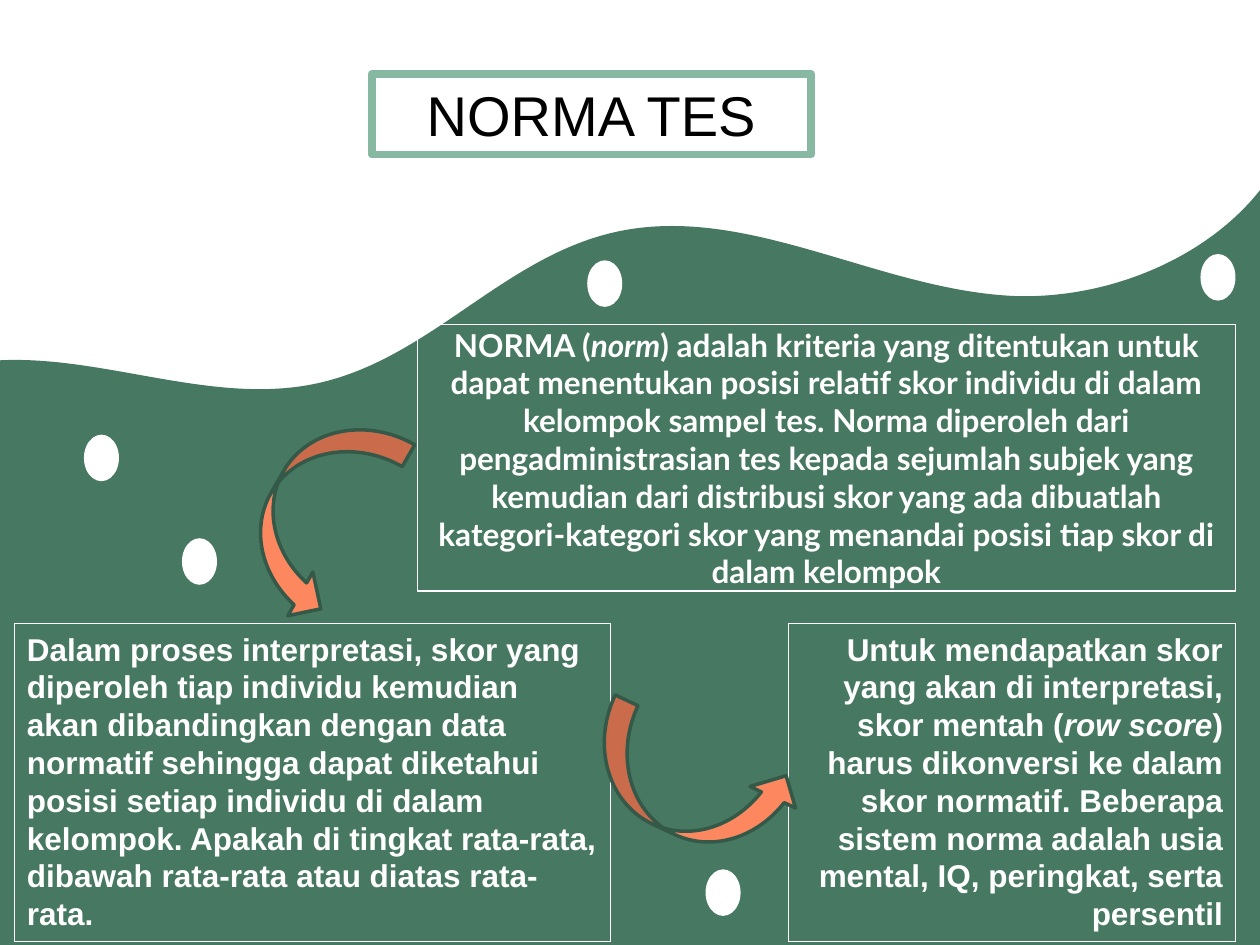
from lxml.etree import SubElement
from pptx import Presentation
from pptx.dml.color import RGBColor
from pptx.enum.shapes import MSO_SHAPE
from pptx.enum.text import MSO_ANCHOR, MSO_AUTO_SIZE, PP_ALIGN
from pptx.oxml.ns import qn
from pptx.util import Pt

GREEN = RGBColor(0x47, 0x78, 0x61)
DARK = RGBColor(0x35, 0x59, 0x48)
MINT = RGBColor(0x87, 0xB8, 0xA1)
ORANGE = RGBColor(0xFD, 0x88, 0x60)
WHITE = RGBColor(0xFF, 0xFF, 0xFF)
BLACK = RGBColor(0, 0, 0)

prs = Presentation()
prs.slide_width, prs.slide_height = Pt(720), Pt(540)
s = prs.slides.add_slide(prs.slide_layouts[6])


def add_text(box, runs, align, font, size, color, border, weight, bold=True):
    sp = s.shapes.add_textbox(*[Pt(v) for v in box])
    sp.line.color.rgb = border
    sp.line.width = Pt(weight)
    tf = sp.text_frame
    tf.word_wrap = True
    tf.auto_size = MSO_AUTO_SIZE.NONE
    p = tf.paragraphs[0]
    p.alignment = align
    for text, italic in runs:
        r = p.add_run()
        r.text = text
        r.font.name = font
        r.font.size = Pt(size)
        r.font.bold = bold
        r.font.italic = italic
        r.font.color.rgb = color
    return tf


left, top = 0, 108.7
curves = [
    [(689.8, 146.9), (635, 170.6), (581, 169.2)],
    [(502.6, 166.3), (427.7, 115.9), (352.1, 132.5)],
    [(286.6, 146.9), (244.8, 206.6), (178.6, 219.6)],
    [(120.2, 231.1), (59, 203), (left, 205.9)],
]
ends = [curve[-1] for curve in curves] + [(left, 540), (720, 540)]
fb = s.shapes.build_freeform(Pt(720), Pt(top), scale=1.0)
fb.add_line_segments([(Pt(x), Pt(y)) for x, y in ends], close=True)
wave = fb.convert_to_shape()
wave.shadow.inherit = False
wave.fill.solid()
wave.fill.fore_color.rgb = GREEN
wave.line.fill.background()
for curve, segment in zip(curves, list(wave.element.iter(qn("a:lnTo")))):
    bezier = segment.makeelement(qn("a:cubicBezTo"))
    for x, y in curve:
        SubElement(bezier, qn("a:pt"), x=str(Pt(x - left)), y=str(Pt(y - top)))
    segment.getparent().replace(segment, bezier)

for x, y in [(48, 248.4), (104, 307.6), (686, 145.2), (403.2, 496.8), (335.6, 148.8)]:
    dot = s.shapes.add_shape(MSO_SHAPE.OVAL, Pt(x), Pt(y), Pt(20), Pt(26.6))
    dot.shadow.inherit = False
    dot.fill.solid()
    dot.fill.fore_color.rgb = WHITE
    dot.line.fill.background()

tf = add_text((238.5, 185.5, 467.5, 152.3), [
    ("NORMA (", False),
    ("norm", True),
    (") adalah kriteria yang ditentukan untuk dapat menentukan posisi relatif skor individu "
     "di dalam kelompok sampel tes. Norma diperoleh dari pengadministrasian tes kepada "
     "sejumlah subjek yang kemudian dari distribusi skor yang ada dibuatlah "
     "kategori-kategori skor yang menandai posisi tiap skor di dalam kelompok", False),
], PP_ALIGN.CENTER, "Lato", 18, WHITE, WHITE, 0.75)
tf.vertical_anchor = MSO_ANCHOR.MIDDLE
tf.margin_top = tf.margin_bottom = Pt(7.2)

add_text((8.3, 356.3, 340.4, 181.6), [
    ("Dalam proses interpretasi, skor yang diperoleh tiap individu kemudian akan "
     "dibandingkan dengan data normatif sehingga dapat diketahui posisi setiap individu "
     "di dalam kelompok. Apakah di tingkat rata-rata, dibawah rata-rata atau diatas "
     "rata-rata.", False),
], PP_ALIGN.LEFT, "Arial", 18, WHITE, WHITE, 0.75)

add_text((450.5, 356.3, 255.5, 181.6), [
    ("Untuk mendapatkan skor yang akan di interpretasi, skor mentah (", False),
    ("row score", True),
    (") harus dikonversi ke dalam skor normatif. Beberapa sistem norma adalah usia "
     "mental, IQ, peringkat, serta persentil", False),
], PP_ALIGN.RIGHT, "Arial", 18, WHITE, WHITE, 0.75)

for x, y, angle in [(365.8, 388.1, 295.3), (152.8, 231.8, 29.8)]:
    arrow = s.shapes.add_shape(MSO_SHAPE.CURVED_RIGHT_ARROW, Pt(x), Pt(y), Pt(57.6), Pt(122.4))
    arrow.shadow.inherit = False
    arrow.rotation = angle
    arrow.fill.solid()
    arrow.fill.fore_color.rgb = ORANGE
    arrow.line.color.rgb = DARK
    arrow.line.width = Pt(2)

add_text((212.4, 42.3, 251, 46), [("NORMA TES", False)],
         PP_ALIGN.CENTER, "Arial", 32, BLACK, MINT, 4.5, bold=False)

prs.save("out.pptx")
